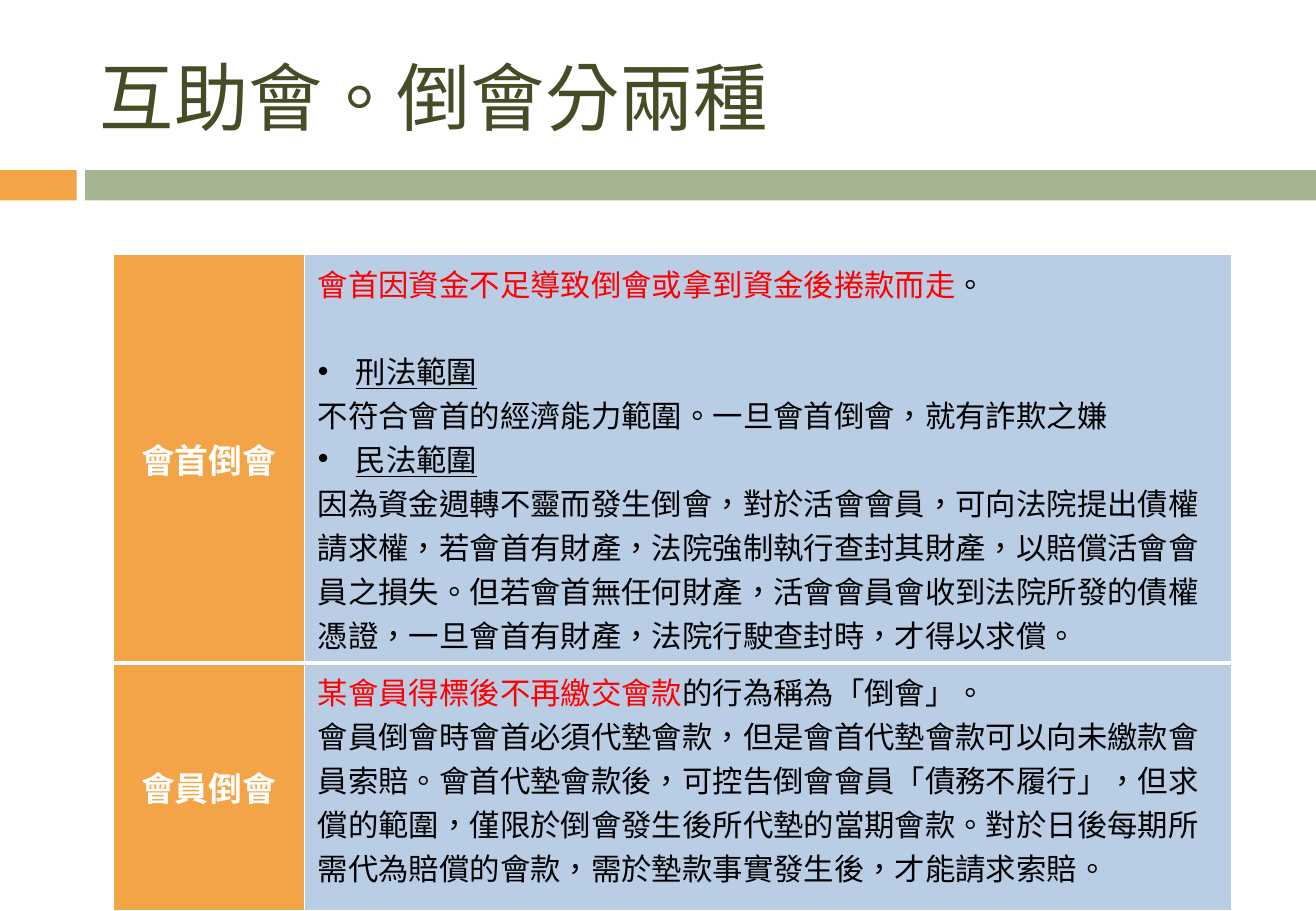
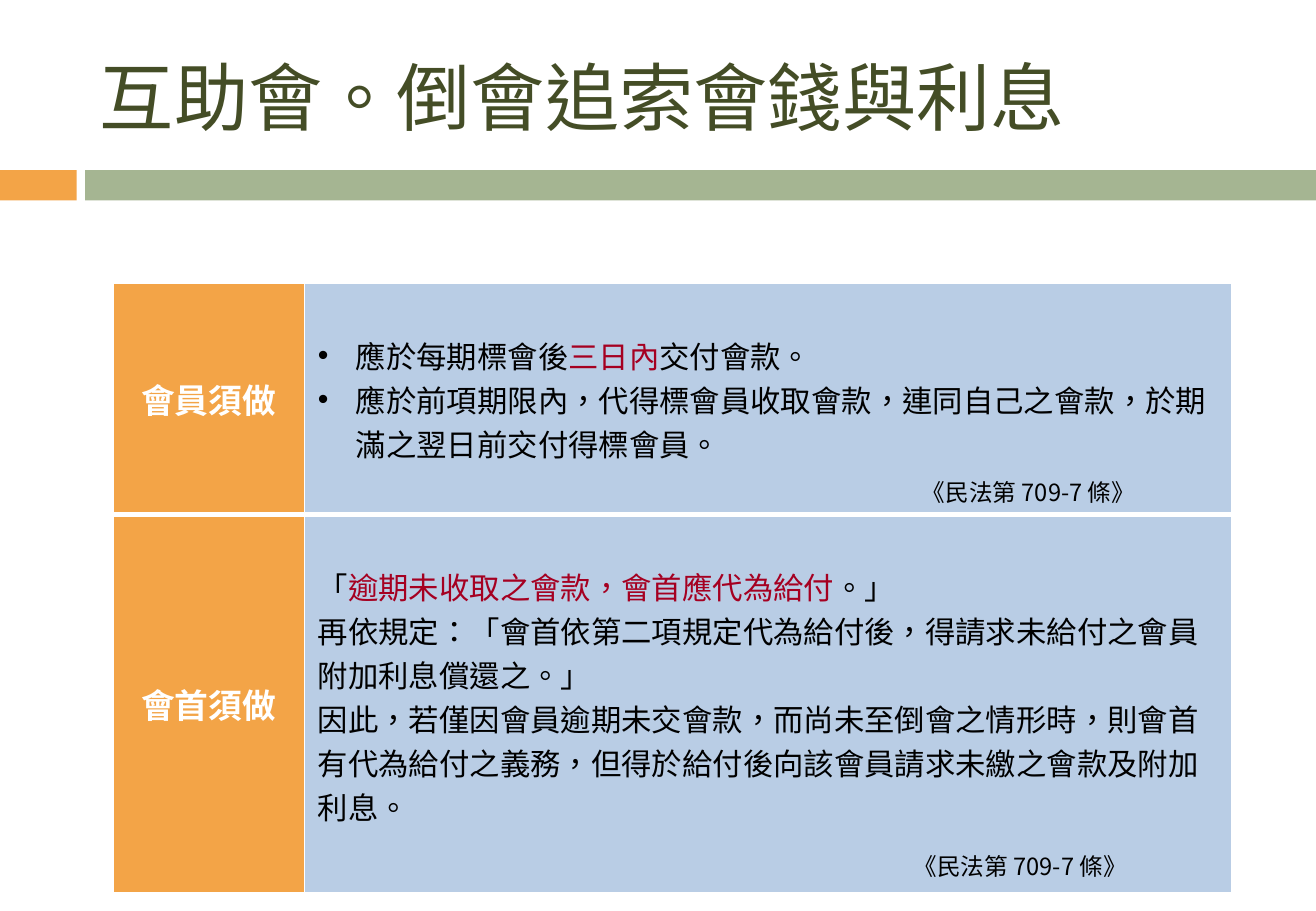
from dataclasses import dataclass

from lxml.etree import SubElement
from pptx import Presentation
from pptx.dml.color import RGBColor
from pptx.enum.shapes import MSO_SHAPE
from pptx.enum.text import MSO_ANCHOR, PP_ALIGN
from pptx.oxml.ns import qn
from pptx.util import Pt

ORANGE, GREEN, BLUE = "F3A447", "A5B592", "B9CDE5"
WHITE, BLACK, OLIVE = "FFFFFF", "000000", "444D26"
RED, CRIMSON = "FF0000", "A50021"
TITLE_FONT, LABEL_FONT, BODY_FONT = "Noto Sans CJK JP", "Noto Sans CJK SC", "Noto Sans CJK TC"

SLIDE_WIDTH, SLIDE_HEIGHT = 780, 540
BANDS = [(0, 45.5, ORANGE), (50.5, SLIDE_WIDTH - 50.5, GREEN)]
BAND_TOP, BAND_HEIGHT = 100.8, 18
TABLE_LEFT, COLUMN_WIDTHS = 67, (113.5, 549.5)
MARGIN_X, MARGIN_Y = 7.9, 3.6
BULLET_INDENT = 22.5
LINE_HEIGHT = 26


@dataclass
class Line:
    runs: list
    bullet: bool = False
    underline: bool = False
    size: int = 18
    font: str = BODY_FONT
    indent: float = 0
    space_before: float = 0


def heading(text, space_before=0):
    return Line([(text, BLACK)], bullet=True, underline=True, space_before=space_before)


def plain(text):
    return Line([(text, BLACK)])


def citation(indent, space_before):
    return Line([("《民法第 709-7 條》", BLACK)], size=14, font=LABEL_FONT,
                indent=indent, space_before=space_before)


# Rows: label, row height, space above the text, lines
SLIDES = [
    ("互助會。倒會分兩種", 151, [
        ("會首倒會", 242, 0, [
            Line([("會首因資金不足導致倒會或拿到資金後捲款而走", RED), ("。", BLACK)]),
            heading("刑法範圍", space_before=LINE_HEIGHT),
            plain("不符合會首的經濟能力範圍。一旦會首倒會，就有詐欺之嫌"),
            heading("民法範圍"),
            plain("因為資金週轉不靈而發生倒會，對於活會會員，可向法院提出債權請求權，"
                  "若會首有財產，法院強制執行查封其財產，以賠償活會會員之損失。"
                  "但若會首無任何財產，活會會員會收到法院所發的債權憑證，"
                  "一旦會首有財產，法院行駛查封時，才得以求償。"),
        ]),
        ("會員倒會", 147, 0, [
            Line([("某會員得標後不再繳交會款", RED), ("的行為稱為「倒會」。", BLACK)]),
            plain("會員倒會時會首必須代墊會款，但是會首代墊會款可以向未繳款會員索賠。"
                  "會首代墊會款後，可控告倒會會員「債務不履行」，"
                  "但求償的範圍，僅限於倒會發生後所代墊的當期會款。"
                  "對於日後每期所需代為賠償的會款，需於墊款事實發生後，才能請求索賠。"),
        ]),
    ]),
    ("互助會。倒會追索會錢與利息", 168, [
        ("會員須做", 137, LINE_HEIGHT, [
            Line([("應於每期標會後", BLACK), ("三日內", CRIMSON), ("交付會款。", BLACK)],
                 bullet=True),
            Line([("應於前項期限內，代得標會員收取會款，連同自己之會款，"
                   "於期滿之翌日前交付得標會員。", BLACK)], bullet=True),
            citation(indent=358, space_before=5),
        ]),
        ("會首須做", 224, LINE_HEIGHT, [
            Line([("「", BLACK), ("逾期未收取之會款，會首應代為給付", CRIMSON), ("。」", BLACK)]),
            plain("再依規定：「會首依第二項規定代為給付後，得請求未給付之會員附加利息償還之。」"),
            plain("因此，若僅因會員逾期未交會款，而尚未至倒會之情形時，"
                  "則會首有代為給付之義務，但得於給付後向該會員請求未繳之會款及附加利息。"),
            citation(indent=353, space_before=12),
        ]),
    ]),
]


def rgb(value):
    return RGBColor.from_string(value)


def format_run(run, font, size, color, bold=False, underline=False):
    run.font.name, run.font.size = font, Pt(size)
    run.font.bold, run.font.underline = bold, underline
    run.font.color.rgb = rgb(color)
    properties = run._r.get_or_add_rPr()
    properties.set("lang", "zh-TW")
    east_asian = SubElement(properties, qn("a:ea"))
    east_asian.set("typeface", font)
    properties.find(qn("a:latin")).addnext(east_asian)


def add_title(slide, text):
    title = slide.shapes.title
    title.left, title.top, title.width, title.height = Pt(52), Pt(18), Pt(695.5), Pt(78)
    title.text_frame.text = text
    title.text_frame.vertical_anchor = MSO_ANCHOR.MIDDLE
    paragraph = title.text_frame.paragraphs[0]
    paragraph.alignment = PP_ALIGN.LEFT
    format_run(paragraph.runs[0], TITLE_FONT, 44, OLIVE)


def add_bands(slide):
    for left, width, color in BANDS:
        band = slide.shapes.add_shape(MSO_SHAPE.RECTANGLE, Pt(left), Pt(BAND_TOP),
                                      Pt(width), Pt(BAND_HEIGHT))
        band.shadow.inherit = False
        band.fill.solid()
        band.fill.fore_color.rgb = rgb(color)
        band.line.fill.background()


def format_cell(cell, color, top_width, bottom_width):
    """Set margins, white borders and fill; borders must precede the fill in the XML."""
    cell.margin_left = cell.margin_right = Pt(MARGIN_X)
    cell.margin_top = cell.margin_bottom = Pt(MARGIN_Y)
    properties = cell._tc.get_or_add_tcPr()
    for side, width in (("L", 1), ("R", 1), ("T", top_width), ("B", bottom_width)):
        border = SubElement(properties, qn(f"a:ln{side}"), w=str(Pt(width)))
        SubElement(SubElement(border, qn("a:solidFill")), qn("a:srgbClr"), val=WHITE)
    cell.fill.solid()
    cell.fill.fore_color.rgb = rgb(color)


def fill_label(cell, text):
    cell.text_frame.text = text
    cell.vertical_anchor = MSO_ANCHOR.MIDDLE
    paragraph = cell.text_frame.paragraphs[0]
    paragraph.alignment = PP_ALIGN.CENTER
    format_run(paragraph.runs[0], LABEL_FONT, 20, WHITE, bold=True)


def fill_body(cell, lines, space_above):
    cell.margin_top = Pt(MARGIN_Y + space_above)
    frame = cell.text_frame
    for index, line in enumerate(lines):
        paragraph = frame.add_paragraph() if index else frame.paragraphs[0]
        paragraph.alignment = PP_ALIGN.LEFT
        paragraph.space_before = Pt(line.space_before)
        properties = paragraph._p.get_or_add_pPr()
        indent = BULLET_INDENT if line.bullet else line.indent
        properties.set("marL", str(Pt(indent)))
        if line.bullet:
            properties.set("indent", str(-Pt(indent)))
            SubElement(properties, qn("a:buFont"), typeface="Arial")
            SubElement(properties, qn("a:buChar"), char="•")
        for text, color in line.runs:
            run = paragraph.add_run()
            run.text = text
            format_run(run, line.font, line.size, color, underline=line.underline)


def add_rules_table(slide, top, rows):
    height = sum(row[1] for row in rows)
    table = slide.shapes.add_table(len(rows), len(COLUMN_WIDTHS), Pt(TABLE_LEFT), Pt(top),
                                   Pt(sum(COLUMN_WIDTHS)), Pt(height)).table
    table.first_row = table.horz_banding = False
    for column, width in zip(table.columns, COLUMN_WIDTHS):
        column.width = Pt(width)
    for index, (label, row_height, space_above, lines) in enumerate(rows):
        table.rows[index].height = Pt(row_height)
        label_cell, body_cell = table.cell(index, 0), table.cell(index, 1)
        top_width = 3 if index else 1
        bottom_width = 3 if index < len(rows) - 1 else 1
        for cell, color in ((label_cell, ORANGE), (body_cell, BLUE)):
            format_cell(cell, color, top_width, bottom_width)
        fill_label(label_cell, label)
        fill_body(body_cell, lines, space_above)


def main():
    presentation = Presentation()
    presentation.slide_width, presentation.slide_height = Pt(SLIDE_WIDTH), Pt(SLIDE_HEIGHT)
    title_only = presentation.slide_layouts[5]
    for title, table_top, rows in SLIDES:
        slide = presentation.slides.add_slide(title_only)
        add_bands(slide)
        add_title(slide, title)
        add_rules_table(slide, table_top, rows)
    presentation.save("out.pptx")


if __name__ == "__main__":
    main()
